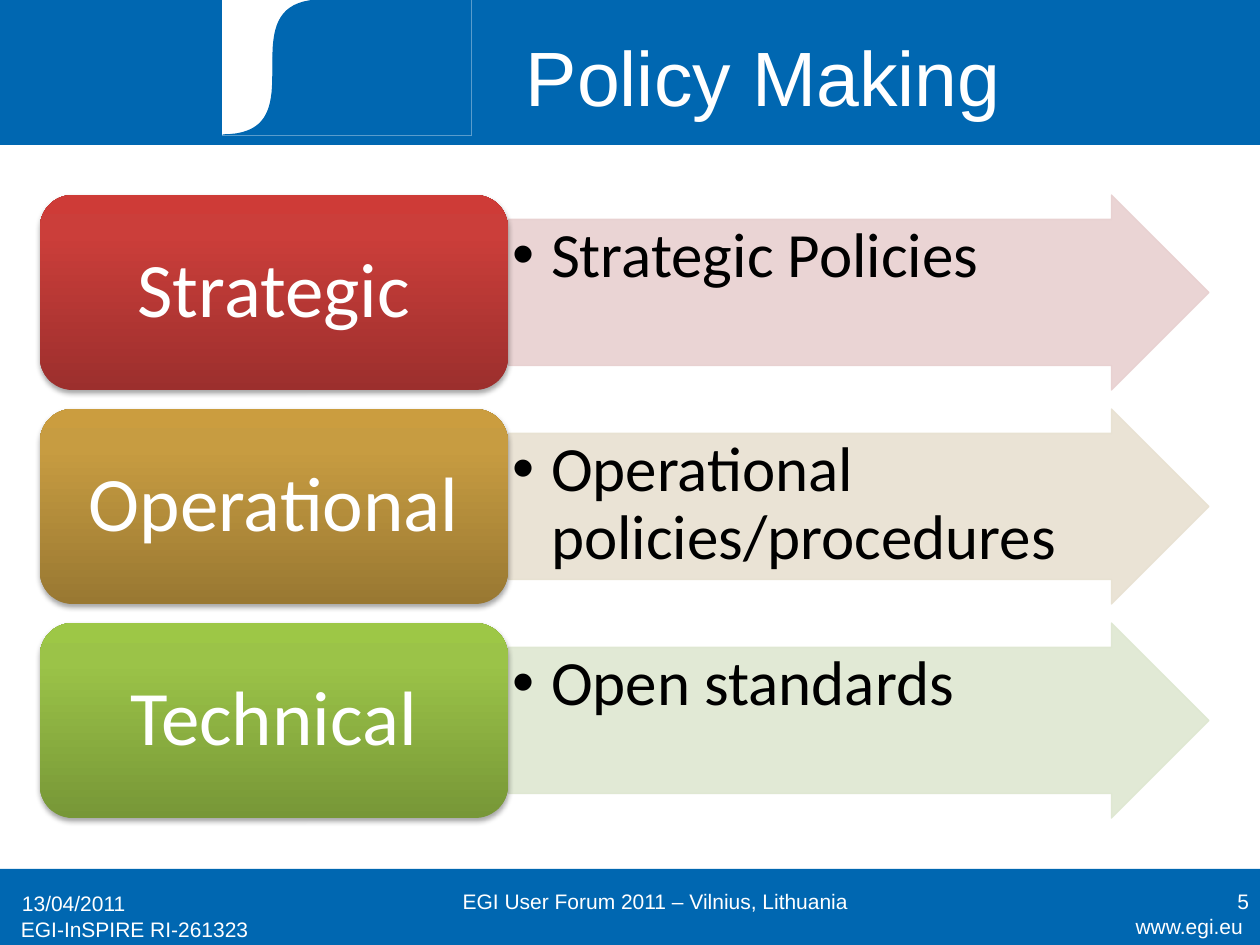
from lxml import etree
from pptx import Presentation, util as u
from pptx.dml.color import RGBColor
from pptx.enum import shapes, text
from pptx.oxml import parse_xml
from pptx.oxml.ns import nsdecls, qn

SCALE = 914400 / 126
COLORS = {"blue": "0067B1", "white": "FFFFFF", "black": "000000"}
# label, policy, arrow colour, gradient from bottom to top
ROWS = [
    ("Strategic", "Strategic Policies", "E8D0D0", ("9C2F2D", "CB3E3A", "CE3B37")),
    ("Operational", "Operational policies/procedures", "E8E1D1", ("997832", "C79C41", "CB9D3F")),
    ("Technical", "Open standards", "DEE7D1", ("779737", "9BC348", "9DC746")),
]
ROW_TOP, ROW_PITCH, ROW_H = 195, 214, 195
LABEL_X, LABEL_W, ARROW_W = 40, 468, 701
SHAPE = shapes.MSO_SHAPE
ALIGN = text.PP_ALIGN
MIDDLE, TOP = text.MSO_ANCHOR.MIDDLE, text.MSO_ANCHOR.TOP


def px(n):
    return u.Emu(round(n * SCALE))


def rgb(name):
    return RGBColor.from_string(COLORS.get(name, name))


def paint(sp, fill, line=None):
    sp.shadow.inherit = False
    sp.fill.solid()
    sp.fill.fore_color.rgb = rgb(fill)
    if line:
        sp.line.color.rgb = rgb(line)
        sp.line.width = u.Pt(0.75)
    else:
        sp.line.fill.background()


def add_shape(s, kind, box, fill, line=None):
    sp = s.shapes.add_shape(kind, *map(px, box))
    paint(sp, fill, line)
    return sp


def write(sp, words, size, font="Arial", color="white", align=ALIGN.LEFT,
          anchor=MIDDLE, inset=(13, 6)):
    tf = sp.text_frame
    tf.word_wrap = True
    tf.vertical_anchor = anchor
    tf.margin_left = tf.margin_right = px(inset[0])
    tf.margin_top = tf.margin_bottom = px(inset[1])
    p = tf.paragraphs[0]
    p.text = words
    p.alignment = align
    p.font.size = u.Pt(size)
    p.font.name = font
    p.font.color.rgb = rgb(color)
    return p


def add_text(s, box, words, align=ALIGN.LEFT):
    write(s.shapes.add_textbox(*map(px, box)), words, 12, align=align)


def set_alpha(color_format_parent, percent):
    clr = color_format_parent.find(".//" + qn("a:srgbClr"))
    etree.SubElement(clr, qn("a:alpha")).set("val", str(percent * 1000))


def set_gradient_and_shadow(sp, stops):
    """Fill upwards through the three stops and add a soft shadow below."""
    gs = "".join(f'<a:gs pos="{pos}"><a:srgbClr val="{c}"/></a:gs>'
                 for pos, c in zip((0, 80000, 100000), stops))
    grad = parse_xml(f'<a:gradFill {nsdecls("a")} rotWithShape="1"><a:gsLst>{gs}</a:gsLst>'
                     '<a:lin ang="16200000" scaled="0"/></a:gradFill>')
    pr = sp._element.spPr
    pr.replace(pr.find(qn("a:solidFill")), grad)
    pr.find(qn("a:effectLst")).append(parse_xml(
        f'<a:outerShdw {nsdecls("a")} blurRad="39370" dist="22860" dir="5400000" rotWithShape="0">'
        '<a:srgbClr val="000000"><a:alpha val="35000"/></a:srgbClr></a:outerShdw>'))


def set_bullet(p, indent):
    pr = p._p.get_or_add_pPr()
    pr.set("marL", str(px(indent)))
    pr.set("indent", str(-px(indent)))
    for tag, key, val in (("a:buFont", "typeface", "Arial"), ("a:buChar", "char", "•")):
        etree.SubElement(pr, qn(tag)).set(key, val)
    # bullet elements come before the default run properties
    pr.append(pr.find(qn("a:defRPr")))


def bezier(a, b, c, d, steps=40):
    for i in range(steps + 1):
        t = i / steps
        w = ((1 - t) ** 3, 3 * t * (1 - t) ** 2, 3 * t * t * (1 - t), t ** 3)
        yield tuple(sum(k * pt[axis] for k, pt in zip(w, (a, b, c, d))) for axis in (0, 1))


def add_banner(s):
    add_shape(s, SHAPE.RECTANGLE, (0, 869, 1260, 76), "blue")
    add_shape(s, SHAPE.RECTANGLE, (0, 0, 1260, 144), "blue", "blue")
    add_shape(s, SHAPE.RECTANGLE, (223, 0, 248, 135), "white", "white")
    curve = bezier((223, 135), (323, 135), (223, 0), (323, 0))
    fb = s.shapes.build_freeform(px(471), 0)
    fb.add_line_segments([(px(x), px(y)) for x, y in [(471, 135), *curve]], close=True)
    paint(fb.convert_to_shape(), "blue", "blue")


def add_title(s, words):
    title = s.shapes.title
    title.left, title.top, title.width, title.height = map(px, (292, 16, 943, 120))
    write(title, words, 44, align=ALIGN.CENTER)
    s.shapes._spTree.append(title._element)  # in front of the banner


def add_row(s, y, label, policy, arrow_color, stops):
    arrow = add_shape(s, SHAPE.RIGHT_ARROW, (LABEL_X + LABEL_W, y, ARROW_W, ROW_H),
                      arrow_color, arrow_color)
    arrow.adjustments[0], arrow.adjustments[1] = 0.75, 0.5
    set_alpha(arrow._element.spPr.find(qn("a:solidFill")), 90)
    set_alpha(arrow._element.spPr.find(qn("a:ln")), 90)
    p = write(arrow, policy, 36, "Calibri", "black", anchor=TOP, inset=(4, 4))
    p.line_spacing = 0.9
    set_bullet(p, 39)

    box = add_shape(s, SHAPE.ROUNDED_RECTANGLE, (LABEL_X, y, LABEL_W, ROW_H), arrow_color)
    set_gradient_and_shadow(box, stops)
    p = write(box, label, 44, "Calibri", align=ALIGN.CENTER, inset=(23, 11))
    p.line_spacing = 0.9


def add_footer(s):
    add_text(s, (1057, 907, 199, 39), "www.egi.eu", ALIGN.RIGHT)
    add_text(s, (8, 910, 315, 39), "EGI-InSPIRE RI-261323")
    add_text(s, (9, 878, 294, 50), "13/04/2011")
    add_text(s, (402, 876, 507, 50), "EGI User Forum 2011 – Vilnius, Lithuania", ALIGN.CENTER)
    add_text(s, (968, 876, 294, 50), "5", ALIGN.RIGHT)


def main():
    prs = Presentation()
    prs.slide_width, prs.slide_height = px(1260), px(945)
    s = prs.slides.add_slide(prs.slide_layouts[5])
    add_banner(s)
    add_title(s, "Policy Making")
    for i, row in enumerate(ROWS):
        add_row(s, ROW_TOP + i * ROW_PITCH, *row)
    add_footer(s)
    prs.save("out.pptx")


if __name__ == "__main__":
    main()
